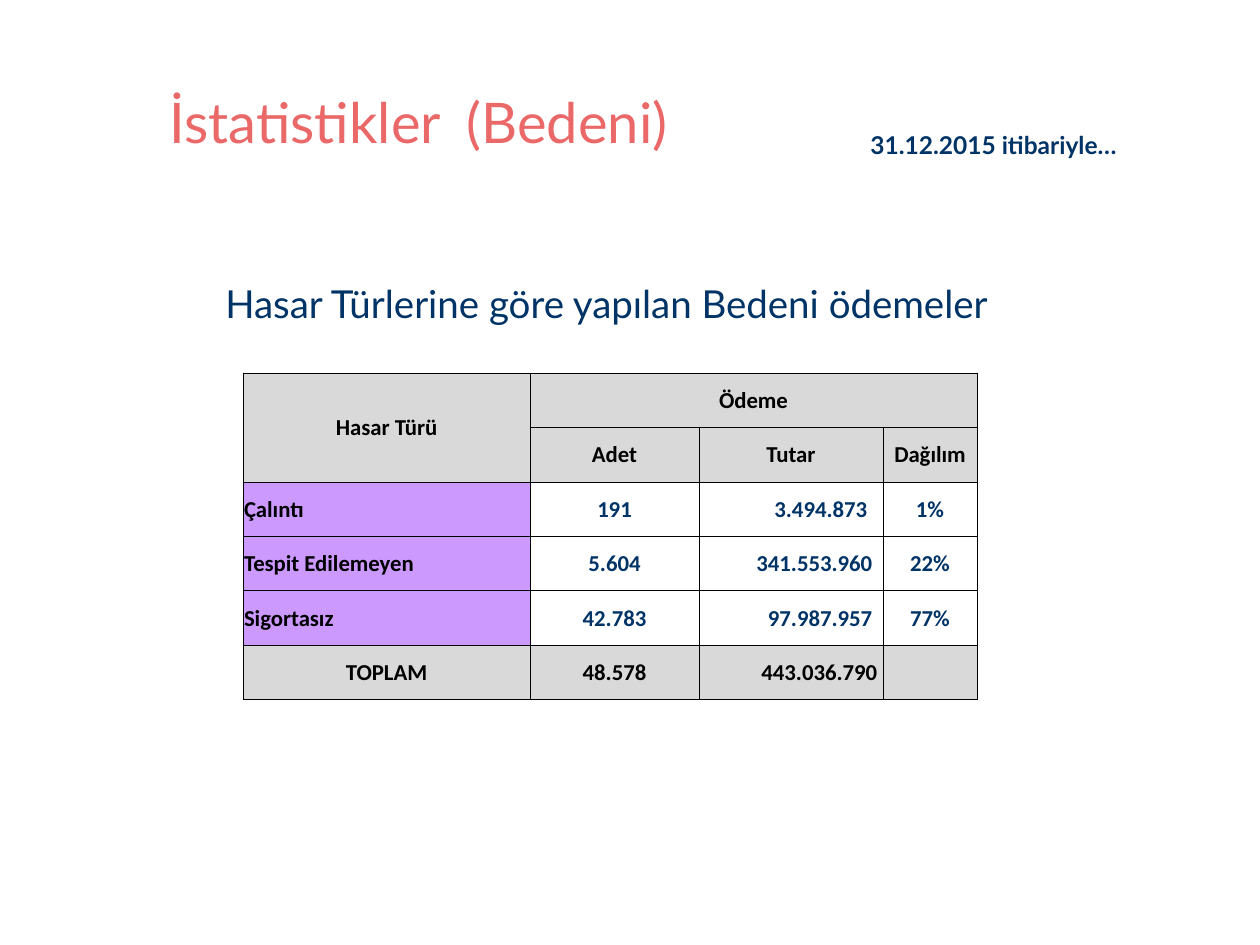
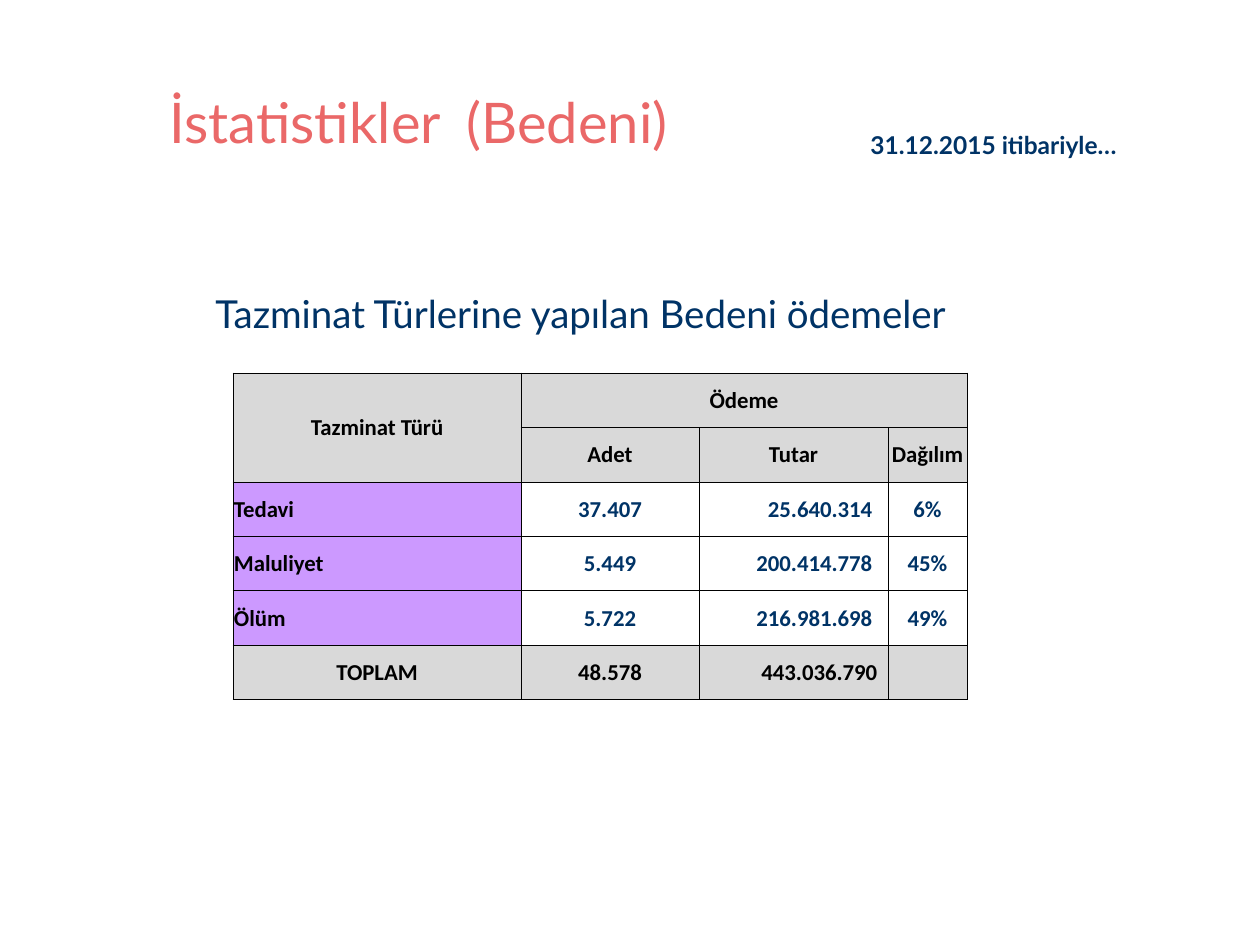
from lxml.etree import SubElement
from pptx import Presentation
from pptx.dml.color import RGBColor
from pptx.enum.text import MSO_ANCHOR as Anchor, MSO_AUTO_SIZE as AutoSize, PP_ALIGN as Align
from pptx.oxml.ns import qn
from pptx.util import Emu, Pt

PX_PER_INCH = 126
COLORS = {
    "title": "EA6868",
    "navy": "003366",
    "black": "000000",
    "grey": "D9D9D9",
    "purple": "CC99FF",
}
TITLE_BOX = (157, 81, 1040, 80)
DATE_BOX = (858, 112, 309, 54)
TABLE_HEIGHT = 327
CELL_INSET = 1
SPACE_WIDTH = 5
BORDER_WIDTH = Pt(0.5)

SLIDES = [
    {
        "heading": "Hasar Türlerine göre yapılan Bedeni ödemeler",
        "heading_box": (213, 255, 853, 78),
        "table_at": (243, 373),
        "columns": (287, 169, 184, 94),
        "category": "Hasar Türü",
        "rows": [
            ("Çalıntı", "191", "3.494.873", "1%"),
            ("Tespit Edilemeyen", "5.604", "341.553.960", "22%"),
            ("Sigortasız", "42.783", "97.987.957", "77%"),
            ("TOPLAM", "48.578", "443.036.790", ""),
        ],
        "amount_indents": (3, 2, 2, 1),
    },
    {
        "heading": "Tazminat Türlerine yapılan Bedeni ödemeler",
        "heading_box": (203, 265, 776, 78),
        "table_at": (233, 373),
        "columns": (288, 178, 189, 79),
        "category": "Tazminat Türü",
        "rows": [
            ("Tedavi", "37.407", "25.640.314", "6%"),
            ("Maluliyet", "5.449", "200.414.778", "45%"),
            ("Ölüm", "5.722", "216.981.698", "49%"),
            ("TOPLAM", "48.578", "443.036.790", ""),
        ],
        "amount_indents": (3, 3, 3, 2),
    },
]


def px(length):
    """Turn pixels into EMU."""
    return Emu(round(length * 914400 / PX_PER_INCH))


def rgb(name):
    """Look up a named colour."""
    return RGBColor.from_string(COLORS[name])


def add_run(paragraph, text, size, color, bold=False, font_name="Lato"):
    """Append one formatted run."""
    run = paragraph.add_run()
    run.text = text
    run.font.name = font_name
    run.font.size = Pt(size)
    run.font.bold = bold
    run.font.color.rgb = rgb(color)
    return run


def add_text_box(slide, box, anchor=Anchor.TOP, wrap=True, line_spacing=None):
    """Add a text box and return its first paragraph."""
    frame = slide.shapes.add_textbox(*map(px, box)).text_frame
    frame.word_wrap = wrap
    frame.auto_size = AutoSize.SHAPE_TO_FIT_TEXT
    frame.vertical_anchor = anchor
    paragraph = frame.paragraphs[0]
    paragraph.line_spacing = line_spacing
    return paragraph


def add_header(slide):
    """Add the shared title and reporting date."""
    title = add_text_box(slide, TITLE_BOX)
    add_run(title, "İstatistikler", 32, "title")
    gap = add_run(title, " ", 32, "title")
    gap.font._element.set("spc", "620")
    add_run(title, "(Bedeni)", 32, "title")
    date = add_text_box(slide, DATE_BOX, wrap=False, line_spacing=1.4)
    add_run(date, "31.12.2015 itibariyle…", 14, "navy", bold=True)


def add_borders(cell):
    """Draw thin black lines on all four sides of a cell."""
    properties = cell._tc.get_or_add_tcPr()
    for side in ("a:lnL", "a:lnR", "a:lnT", "a:lnB"):
        line = SubElement(properties, qn(side), w=str(BORDER_WIDTH))
        fill = SubElement(line, qn("a:solidFill"))
        SubElement(fill, qn("a:srgbClr"), val=COLORS["black"])


def style_cell(cell, text, align, color, fill, indent=0):
    """Fill, border and label one table cell."""
    cell.margin_left = cell.margin_top = px(CELL_INSET)
    cell.margin_right = px(CELL_INSET + SPACE_WIDTH * indent)
    cell.margin_bottom = 0
    cell.vertical_anchor = Anchor.MIDDLE
    add_borders(cell)
    if fill:
        cell.fill.solid()
        cell.fill.fore_color.rgb = rgb(fill)
    else:
        cell.fill.background()
    paragraph = cell.text_frame.paragraphs[0]
    paragraph.alignment = align
    if text:
        add_run(paragraph, text, 13, color, bold=True, font_name="Calibri")


def add_payment_table(slide, left, top, content):
    """Add the payments table with its two header rows and total row."""
    header = [(content["category"], "Ödeme", "", ""), ("", "Adet", "Tutar", "Dağılım")]
    rows = header + content["rows"]
    columns = content["columns"]
    table = slide.shapes.add_table(
        len(rows), len(columns), px(left), px(top), px(sum(columns)), px(TABLE_HEIGHT)
    ).table
    table.first_row = table.horz_banding = False
    for column, width in zip(table.columns, columns):
        column.width = px(width)
    for row in table.rows:
        row.height = px(TABLE_HEIGHT / len(rows))

    last = len(rows) - 1
    for row_index, row in enumerate(rows):
        is_data = len(header) <= row_index < last
        for column_index, text in enumerate(row):
            align, color, fill, indent = Align.CENTER, "black", "grey", 0
            if is_data and column_index == 0:
                align, fill = Align.LEFT, "purple"
            elif is_data:
                color, fill = "navy", None
            if column_index == 2 and row_index >= len(header):
                align = Align.RIGHT
                indent = content["amount_indents"][row_index - len(header)]
            style_cell(table.cell(row_index, column_index), text, align, color, fill, indent)
    table.cell(0, 0).merge(table.cell(1, 0))
    table.cell(0, 1).merge(table.cell(0, 3))


def add_statistics_slide(presentation, content):
    """Add one slide with header, heading and payments table."""
    slide = presentation.slides.add_slide(presentation.slide_layouts[6])
    add_header(slide)
    heading = add_text_box(slide, content["heading_box"], Anchor.MIDDLE, line_spacing=1.4)
    add_run(heading, content["heading"], 22, "navy")
    add_payment_table(slide, *content["table_at"], content)


def main():
    """Build and save the presentation."""
    presentation = Presentation()
    presentation.slide_width = px(1260)
    presentation.slide_height = px(945)
    for content in SLIDES:
        add_statistics_slide(presentation, content)
    presentation.save("out.pptx")


if __name__ == "__main__":
    main()
